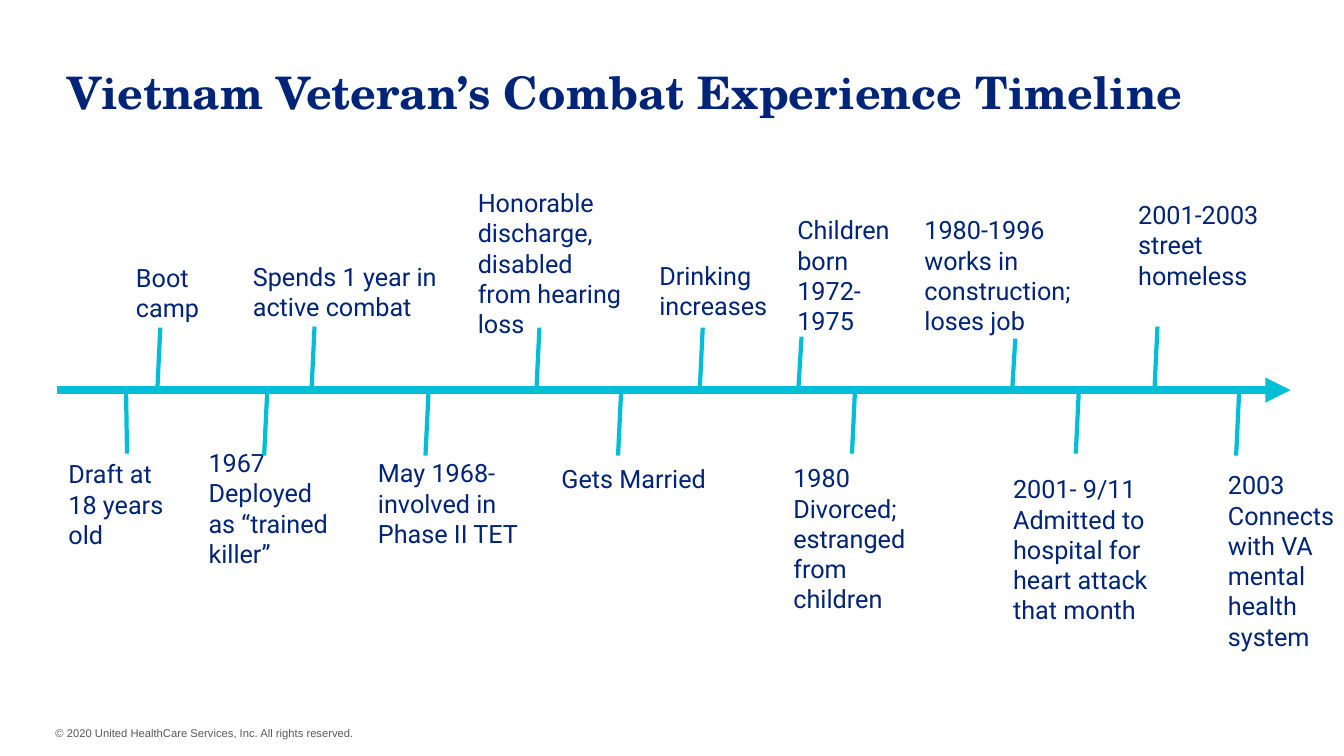
from dataclasses import dataclass

from lxml import etree
from pptx import Presentation
from pptx.dml.color import RGBColor
from pptx.enum.shapes import MSO_CONNECTOR
from pptx.enum.text import MSO_ANCHOR, MSO_AUTO_SIZE
from pptx.oxml.ns import qn
from pptx.util import Inches, Pt

STRAIGHT = MSO_CONNECTOR.STRAIGHT
TOP, MIDDLE = MSO_ANCHOR.TOP, MSO_ANCHOR.MIDDLE
GROW, FIXED = MSO_AUTO_SIZE.SHAPE_TO_FIT_TEXT, MSO_AUTO_SIZE.NONE
NAVY = RGBColor(0x00, 0x24, 0x77)
CYAN = RGBColor(0x00, 0xBE, 0xD5)
GRAY = RGBColor(0x59, 0x59, 0x59)


@dataclass
class Event:
    """A timeline event: its label, label box and the upper end of its tick."""
    text: str
    box: tuple
    tick: tuple
    length: float = 0.63
    lean: float = -0.03


EVENTS = [
    Event("Draft at 18 years old", (0.58, 4.5, 1.35, 0.71), (1.25, 3.87), lean=0.01),
    Event("Boot camp", (1.25, 2.55, 1.29, 0.71), (1.59, 3.25)),
    Event("1967 Deployed as “trained killer”", (1.97, 4.39, 1.47, 1.31), (2.65, 3.89)),
    Event("Spends 1 year in active combat", (2.41, 2.54, 2.06, 0.71), (3.12, 3.24)),
    Event("May 1968- involved in Phase II TET", (3.65, 4.49, 1.65, 1.01), (4.25, 3.89)),
    Event("Honorable discharge, disabled from hearing loss",
          (4.64, 1.81, 1.65, 1.62), (5.35, 3.25)),
    Event("Gets Married", (5.47, 4.55, 1.65, 0.4), (6.16, 3.89)),
    Event("Drinking increases", (6.44, 2.53, 1.65, 0.71), (6.97, 3.25)),
    Event("Children born 1972-1975", (7.81, 2.08, 1.3, 1.31), (7.95, 3.34), 0.5),
    Event("1980 Divorced; estranged from children", (7.77, 4.54, 1.65, 1.31), (8.48, 3.87)),
    Event("1980-1996 works in construction; loses job",
          (9.07, 2.08, 1.77, 1.31), (10.07, 3.36), 0.5),
    Event("2001- 9/11\nAdmitted to hospital for heart attack that month",
          (9.95, 4.65, 1.77, 1.62), (10.7, 3.87)),
    Event("2001-2003 street homeless", (11.19, 1.93, 1.77, 1.01), (11.48, 3.24)),
    Event("2003\nConnects with VA mental health system",
          (12.08, 4.61, 1.35, 1.92), (12.29, 3.89)),
]


def add_text(shapes, box, text, font, size, color, bold=False, anchor=TOP, fit=GROW):
    """Place text in a box, one paragraph per line, and return its frame."""
    tf = shapes.add_textbox(*map(Inches, box)).text_frame
    tf.word_wrap = True
    tf.auto_size = fit
    tf.vertical_anchor = anchor
    for i, line in enumerate(text.split("\n")):
        p = tf.add_paragraph() if i else tf.paragraphs[0]
        r = p.add_run()
        r.text = line
        r.font.name, r.font.size, r.font.bold = font, Pt(size), bold
        r.font.color.rgb = color
    return tf


def add_line(shapes, start, end, width, arrow=False):
    """Draw a cyan line, optionally with an arrowhead at its end."""
    line = shapes.add_connector(STRAIGHT, *map(Inches, (*start, *end)))
    line.line.color.rgb = CYAN
    line.line.width = Pt(width)
    if arrow:
        etree.SubElement(line.line._get_or_add_ln(), qn("a:tailEnd"), type="triangle")
    etree.SubElement(line._element.spPr, qn("a:effectLst"))


def add_title(s, box):
    """Add the slide title."""
    add_text(s.shapes, box, "Vietnam Veteran’s Combat Experience Timeline",
             "TeX Gyre Schola", 32, NAVY, bold=True, anchor=MIDDLE, fit=FIXED)


def add_footer(s, box):
    """Add the copyright line."""
    tf = add_text(s.shapes, box,
                  "© 2020 United HealthCare Services, Inc. All rights reserved.",
                  "Arial", 8, GRAY)
    tf.margin_left = 0


def add_event(s, event):
    """Group an event's label with its tick."""
    shapes = s.shapes.add_group_shape().shapes
    x, y = event.tick
    add_text(shapes, event.box, event.text, "Roboto", 18, NAVY)
    add_line(shapes, event.tick, (x + event.lean, y + event.length), 3)


def add_timeline(s, left, y, width):
    """Draw the time axis and its events."""
    add_line(s.shapes, (left, y), (left + width, y), 6, arrow=True)
    for event in EVENTS:
        add_event(s, event)


def main():
    """Build and save the slide."""
    prs = Presentation()
    prs.slide_width, prs.slide_height = Inches(13.33), Inches(7.5)
    s = prs.slides.add_slide(prs.slide_layouts[6])
    add_footer(s, (0.55, 7.16, 3.45, 0.24))
    add_title(s, (0.57, 0.51, 12.23, 0.8))
    add_timeline(s, 0.57, 3.87, 12.23)
    prs.save("out.pptx")


if __name__ == "__main__":
    main()
